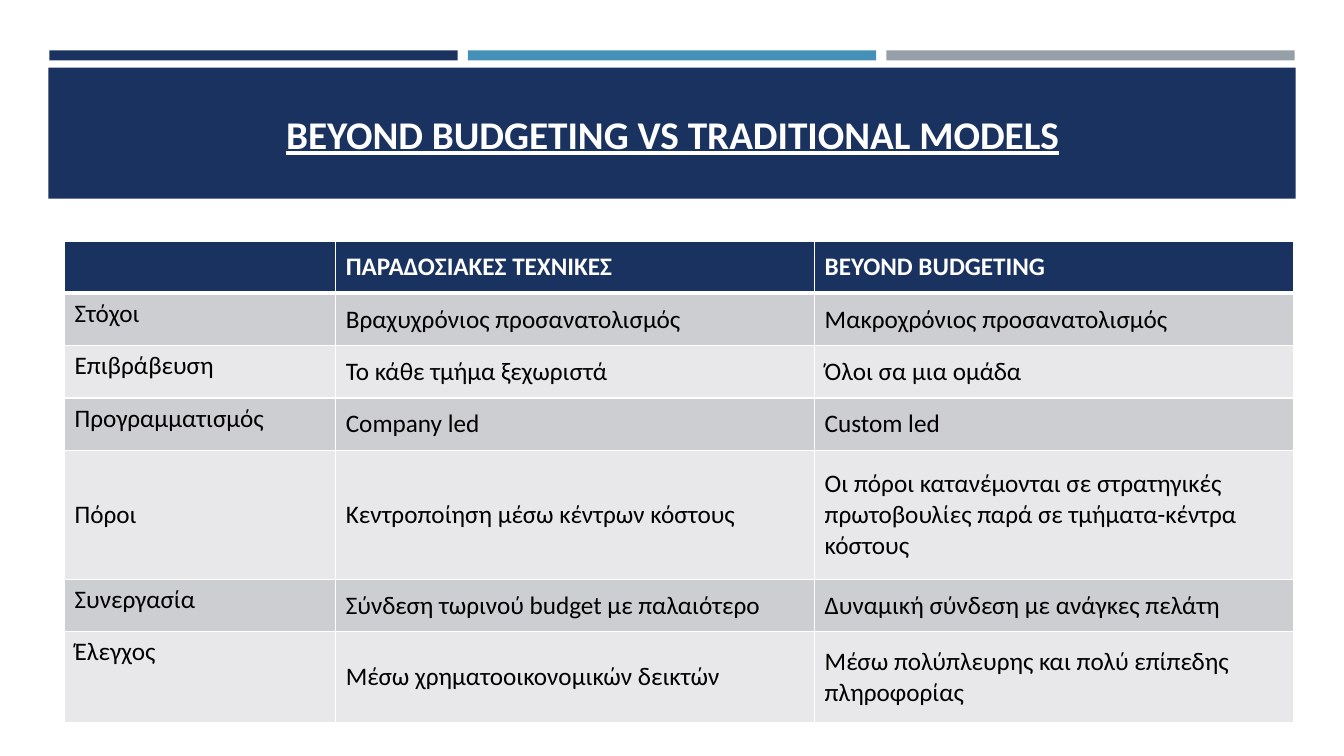
from lxml.etree import SubElement
from pptx import Presentation
from pptx.dml.color import RGBColor
from pptx.enum.shapes import MSO_SHAPE
from pptx.enum.text import MSO_ANCHOR, PP_ALIGN
from pptx.oxml.ns import qn
from pptx.util import Inches, Pt

NAVY = RGBColor(0x1A, 0x32, 0x60)
BLUE = RGBColor(0x45, 0x90, 0xB8)
GREY = RGBColor(0x96, 0x9F, 0xA7)
BAND_DARK = RGBColor(0xCD, 0xCE, 0xD2)
BAND_LIGHT = RGBColor(0xE8, 0xE8, 0xEA)
WHITE = RGBColor(0xFF, 0xFF, 0xFF)
BLACK = RGBColor(0, 0, 0)
FONT = "Calibri"

TITLE = "BEYOND BUDGETING VS TRADITIONAL MODELS"
STRIPES = [NAVY, BLUE, GREY]
COMPARISON = [
    ("", "ΠΑΡΑΔΟΣΙΑΚΕΣ ΤΕΧΝΙΚΕΣ", "BEYOND BUDGETING"),
    ("Στόχοι", "Βραχυχρόνιος προσανατολισμός", "Μακροχρόνιος προσανατολισμός"),
    ("Επιβράβευση", "Το κάθε τμήμα ξεχωριστά", "Όλοι σα μια ομάδα"),
    ("Προγραμματισμός", "Company led", "Custom led"),
    ("Πόροι", "Κεντροποίηση μέσω κέντρων κόστους",
     "Οι πόροι κατανέμονται σε στρατηγικές πρωτοβουλίες παρά σε τμήματα-κέντρα κόστους"),
    ("Συνεργασία", "Σύνδεση τωρινού budget με παλαιότερο",
     "Δυναμική σύνδεση με ανάγκες πελάτη"),
    ("Έλεγχος", "Μέσω χρηματοοικονομικών δεικτών",
     "Μέσω πολύπλευρης και πολύ επίπεδης πληροφορίας"),
]
COLUMN_WIDTHS = [2.69, 4.75, 4.75]
ROW_HEIGHTS = [0.52, 0.52, 0.52, 0.52, 1.28, 0.52, 0.9]
CENTRED_LABELS = {"Πόροι"}


def add_bar(slide, left, top, width, height, color):
    bar = slide.shapes.add_shape(
        MSO_SHAPE.RECTANGLE, Inches(left), Inches(top), Inches(width), Inches(height))
    bar.shadow.inherit = False
    bar.fill.solid()
    bar.fill.fore_color.rgb = color
    bar.line.fill.background()


def style(paragraph, size, color, bold):
    paragraph.font.name = FONT
    paragraph.font.size = Pt(size)
    paragraph.font.color.rgb = color
    paragraph.font.bold = bold


def add_borders(cell, bottom_width):
    properties = cell._tc.get_or_add_tcPr()
    sides = {"a:lnL": 1, "a:lnR": 1, "a:lnT": 1, "a:lnB": bottom_width}
    for position, (side, width) in enumerate(sides.items()):
        border = SubElement(properties, qn(side), w=str(Pt(width)))
        fill = SubElement(border, qn("a:solidFill"))
        SubElement(fill, qn("a:srgbClr"), val=str(WHITE))
        properties.insert(position, border)


def add_title(slide):
    add_bar(slide, 0.48, 0.67, 12.37, 1.3, NAVY)
    title = slide.shapes.add_textbox(Inches(0.64), Inches(0.77), Inches(12.06), Inches(1.11))
    frame = title.text_frame
    frame.word_wrap = True
    frame.vertical_anchor = MSO_ANCHOR.MIDDLE
    heading = frame.paragraphs[0]
    heading.text = TITLE
    heading.alignment = PP_ALIGN.CENTER
    style(heading, 28, WHITE, True)
    heading.font.underline = True


def add_comparison(slide):
    table = slide.shapes.add_table(
        len(COMPARISON), len(COLUMN_WIDTHS), Inches(0.64), Inches(2.39),
        Inches(sum(COLUMN_WIDTHS)), Inches(sum(ROW_HEIGHTS))).table
    for column, width in zip(table.columns, COLUMN_WIDTHS):
        column.width = Inches(width)
    for r, (entries, height) in enumerate(zip(COMPARISON, ROW_HEIGHTS)):
        table.rows[r].height = Inches(height)
        header = r == 0
        band = NAVY if header else (BAND_LIGHT, BAND_DARK)[r % 2]
        for c, entry in enumerate(entries):
            cell = table.cell(r, c)
            cell.text = entry
            centred = c > 0 or entry in CENTRED_LABELS
            cell.vertical_anchor = MSO_ANCHOR.MIDDLE if centred else MSO_ANCHOR.TOP
            cell.fill.solid()
            cell.fill.fore_color.rgb = band
            style(cell.text_frame.paragraphs[0], 18, WHITE if header else BLACK, header)
            add_borders(cell, 3 if header else 1)


def main():
    deck = Presentation()
    deck.slide_width = Inches(13.33)
    deck.slide_height = Inches(7.5)
    slide = deck.slides.add_slide(deck.slide_layouts[6])
    for i, color in enumerate(STRIPES):
        add_bar(slide, 0.49 + i * 4.15, 0.5, 4.05, 0.1, color)
    add_title(slide)
    add_comparison(slide)
    deck.save("out.pptx")


if __name__ == "__main__":
    main()
